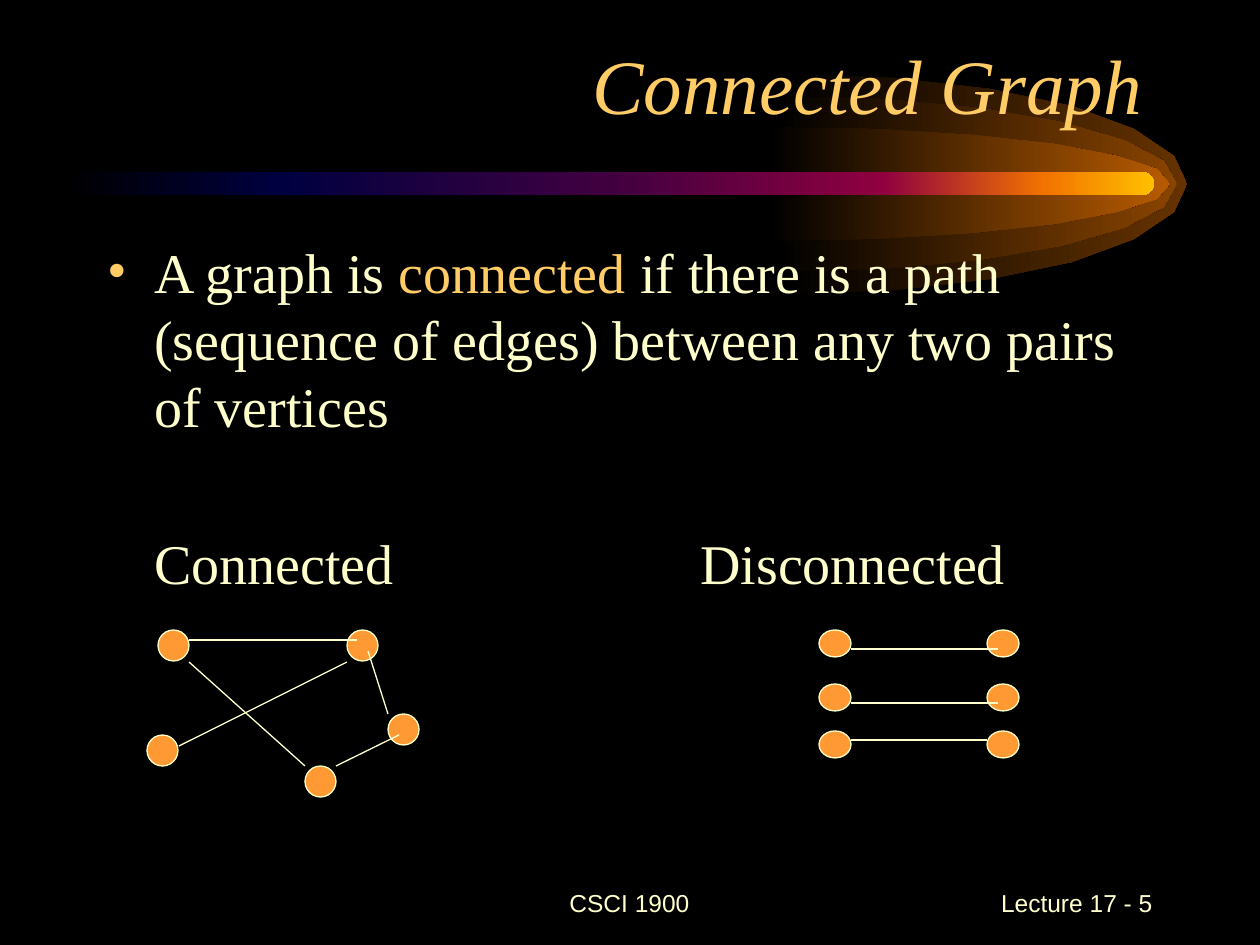
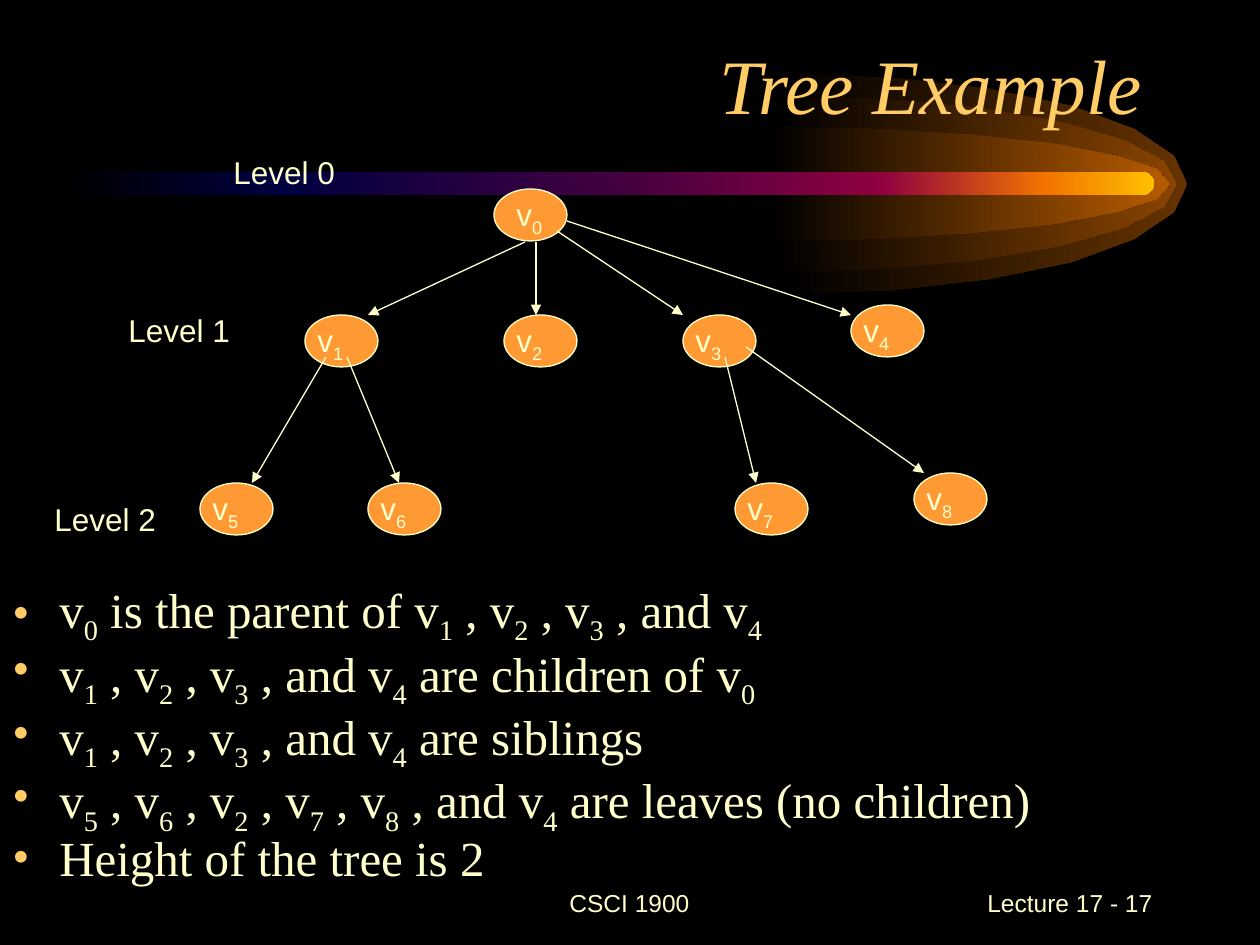
import math

from lxml import etree
from pptx import Presentation
from pptx import util as u
from pptx.dml.color import RGBColor
from pptx.enum import shapes, text
from pptx.oxml.ns import qn

PX = 914400 / 126
SERIF, SANS = "Times New Roman", "Arial"
BLACK, CREAM, GOLD, ORANGE = "000000", "FFFFCC", "FFCC66", "FF9933"
LEFT, CENTER, RIGHT = text.PP_ALIGN.LEFT, text.PP_ALIGN.CENTER, text.PP_ALIGN.RIGHT
TOP, MIDDLE, BOTTOM = text.MSO_ANCHOR.TOP, text.MSO_ANCHOR.MIDDLE, text.MSO_ANCHOR.BOTTOM

# Comet behind the title: centre x, vertical radius, colour at the tip
GLOWS = [(793, 110, "663300"), (783, 88, "894400"), (776, 57, "B75B00")]
GLOW_RADIUS, GLOW_Y, GLOW_TAIL = 394, 184, 6
BAR = (63, 172, 1091, 23)
BAR_STOPS = [(0, BLACK), (20, "000040"), (50, "400040"),
             (75, "8F0040"), (90, "F27300"), (100, "FFBF00")]
COURSE = "CSCI 1900"

# A star marks accented words; an underscore puts the next character below the line
DEFINITION = ("A graph is *connected* if there is a path (sequence of edges) "
              "between any two pairs of vertices")
GRAPH_LABELS = [("Connected", 47), ("Disconnected", 593)]
CONNECTED_DOTS = [(158, 630), (147, 735), (347, 630), (305, 766), (388, 714)]
CONNECTED_EDGES = [(179, 746, 347, 662), (368, 651, 388, 714), (399, 735, 336, 766),
                   (305, 766, 189, 662), (189, 640, 357, 640)]
PAIR_COLUMNS = (819, 987)
# Top of the dots, height of the edge, right end of the edge
PAIR_ROWS = [(630, 649, 998), (684, 703, 998), (731, 740, 987)]

LEVELS = [("Level 0", 221, 147), ("Level 1", 116, 305), ("Level 2", 42, 494)]
TREE_NODES = [(494, 189), (305, 315), (504, 315), (683, 315), (851, 305),
              (200, 483), (368, 483), (735, 483), (914, 473)]
ROOT_LABEL_SHIFT = 10
TREE_ARROWS = [(525, 242, 368, 315), (536, 242, 536, 315), (557, 231, 683, 315),
               (567, 221, 851, 315), (326, 357, 252, 483), (347, 357, 399, 483),
               (725, 357, 756, 483), (746, 347, 924, 473)]
# Fact, line spacing, points before
TREE_FACTS = [
    ("v_0 is the parent of v_1 , v_2 , v_3 , and v_4", 1.0, 0),
    ("v_1 , v_2 , v_3 , and v_4 are children of v_0", 0.8, 1.8),
    ("v_1 , v_2 , v_3 , and v_4 are siblings", 0.8, 5.6),
    ("v_5 , v_6 , v_2 , v_7 , v_8 , and v_4 are leaves (no children)", 0.8, 5.6),
    ("Height of the tree is 2", 0.8, 5.6),
]


def px(*lengths):
    return [u.Emu(round(length * PX)) for length in lengths]


def rgb(value):
    return RGBColor.from_string(value)


def style(para, size, face, color=CREAM, align=LEFT, italic=False):
    para.alignment = align
    font = para.font
    font.size, font.name, font.italic = u.Pt(size), face, italic
    font.color.rgb = rgb(color)


def add_spans(para, marked):
    """Write marked text as runs with accents and subscripts."""
    for index, piece in enumerate(marked.split("*")):
        head, *tails = piece.split("_")
        parts = [(head, False)]
        for tail in tails:
            parts += [(tail[0], True), (tail[1:], False)]
        for words, lowered in parts:
            if words:
                span = para.add_run()
                span.text = words
                if index % 2:
                    span.font.color.rgb = rgb(GOLD)
                if lowered:
                    span._r.get_or_add_rPr().set("baseline", "-25000")


def add_frame(slide, place, anchor=TOP):
    frame = slide.shapes.add_textbox(*px(*place)).text_frame
    frame.word_wrap, frame.vertical_anchor = True, anchor
    return frame


def add_text(slide, words, place, size, face, anchor=TOP, **look):
    para = add_frame(slide, place, anchor).paragraphs[0]
    add_spans(para, words)
    style(para, size, face, **look)


def write_bullet(para, words, size):
    indent = px(47)[0]
    props = para._p.get_or_add_pPr()
    props.set("marL", str(indent))
    props.set("indent", str(-indent))
    color = etree.SubElement(props, qn("a:buClr"))
    etree.SubElement(color, qn("a:srgbClr"), val=GOLD)
    etree.SubElement(props, qn("a:buFont"), typeface=SERIF)
    etree.SubElement(props, qn("a:buChar"), char="•")
    style(para, size, SERIF)
    add_spans(para, words)


def write_tabbed(para, labels, size):
    """Place each label at its own tab stop."""
    stops = etree.SubElement(para._p.get_or_add_pPr(), qn("a:tabLst"))
    for _, left in labels:
        etree.SubElement(stops, qn("a:tab"), pos=str(px(left)[0]), algn="l")
    style(para, size, SERIF)
    add_spans(para, "".join(f"\t{label}" for label, _ in labels))


def fill_gradient(shape, stops):
    """Fill from left to right, without outline or shadow."""
    shape.shadow.inherit = False
    shape.line.fill.background()
    shape.fill.gradient()
    shape.fill.gradient_angle = 0
    stop_list = shape._element.spPr.find(qn("a:gradFill")).find(qn("a:gsLst"))
    for old in list(stop_list):
        stop_list.remove(old)
    for percent, color in stops:
        stop = etree.SubElement(stop_list, qn("a:gs"), pos=str(percent * 1000))
        etree.SubElement(stop, qn("a:srgbClr"), val=color)


def add_comet(slide):
    for center, height, color in GLOWS:
        arc = [(center + GLOW_RADIUS * math.cos(math.radians(angle)),
                GLOW_Y + height * math.sin(math.radians(angle)))
               for angle in range(-90, 91, 15)]
        tail = center - GLOW_TAIL
        outline = slide.shapes.build_freeform(tail, GLOW_Y - height, scale=PX)
        outline.add_line_segments(arc + [(tail, GLOW_Y + height)], close=True)
        fill_gradient(outline.convert_to_shape(), [(0, BLACK), (100, color)])
    bar = slide.shapes.add_shape(shapes.MSO_SHAPE.ROUNDED_RECTANGLE, *px(*BAR))
    bar.adjustments[0] = 0.5
    fill_gradient(bar, BAR_STOPS)


def add_node(slide, left, top, width, height):
    node = slide.shapes.add_shape(shapes.MSO_SHAPE.OVAL, *px(left, top, width, height))
    node.shadow.inherit = False
    node.fill.solid()
    node.fill.fore_color.rgb = rgb(ORANGE)
    node.line.color.rgb = rgb(CREAM)
    node.line.width = u.Pt(0.75)


def add_edge(slide, ends, arrow=False):
    edge = slide.shapes.add_connector(shapes.MSO_CONNECTOR.STRAIGHT, *px(*ends))
    edge.line.color.rgb = rgb(CREAM)
    edge.line.width = u.Pt(0.75)
    if arrow:
        etree.SubElement(edge.line._get_or_add_ln(), qn("a:tailEnd"), type="triangle")
    etree.SubElement(edge._element.spPr, qn("a:effectLst"))


def add_slide(deck, title, number):
    slide = deck.slides.add_slide(deck.slide_layouts[6])
    slide.background.fill.solid()
    slide.background.fill.fore_color.rgb = rgb(BLACK)
    add_comet(slide)
    add_text(slide, COURSE, (430, 871, 399, 63), 14, SANS, MIDDLE, align=CENTER)
    add_text(slide, f"Lecture 17 - {number}", (903, 871, 262, 63), 14, SANS, MIDDLE,
             align=RIGHT)
    add_text(slide, title, (84, 31, 1071, 105), 44, SERIF, BOTTOM,
             color=GOLD, align=RIGHT, italic=True)
    return slide


def build_connected_graph(deck):
    slide = add_slide(deck, "Connected Graph", 5)
    frame = add_frame(slide, (95, 231, 1071, 620))
    write_bullet(frame.paragraphs[0], DEFINITION, 32)
    labels = frame.add_paragraph()
    write_tabbed(labels, GRAPH_LABELS, 32)
    labels.space_before = u.Pt(51)
    for left, top in CONNECTED_DOTS:
        add_node(slide, left, top, 31, 31)
    for ends in CONNECTED_EDGES:
        add_edge(slide, ends)
    for top, _, _ in PAIR_ROWS:
        for left in PAIR_COLUMNS:
            add_node(slide, left, top, 32, 27)
    for _, edge_y, edge_end in PAIR_ROWS:
        add_edge(slide, (PAIR_COLUMNS[0] + 32, edge_y, edge_end, edge_y))


def build_tree(deck):
    slide = add_slide(deck, "Tree Example", 17)
    for label, left, top in LEVELS:
        add_text(slide, label, (left, top, 158, 50), 18, SANS)
    for left, top in TREE_NODES:
        add_node(slide, left, top, 73, 52)
    for ends in TREE_ARROWS:
        add_edge(slide, ends, arrow=True)
    for index, (left, top) in enumerate(TREE_NODES):
        shift = 0 if index else ROOT_LABEL_SHIFT
        add_text(slide, f"v_{index}", (left + shift, top, 73, 50), 18, SANS)
    frame = add_frame(slide, (0, 573, 1260, 334))
    for index, (fact, line_spacing, gap) in enumerate(TREE_FACTS):
        para = frame.add_paragraph() if index else frame.paragraphs[0]
        write_bullet(para, fact, 28)
        para.line_spacing, para.space_before = line_spacing, u.Pt(gap)


def main():
    deck = Presentation()
    deck.slide_width, deck.slide_height = px(1260, 945)
    build_connected_graph(deck)
    build_tree(deck)
    deck.save("out.pptx")


if __name__ == "__main__":
    main()
